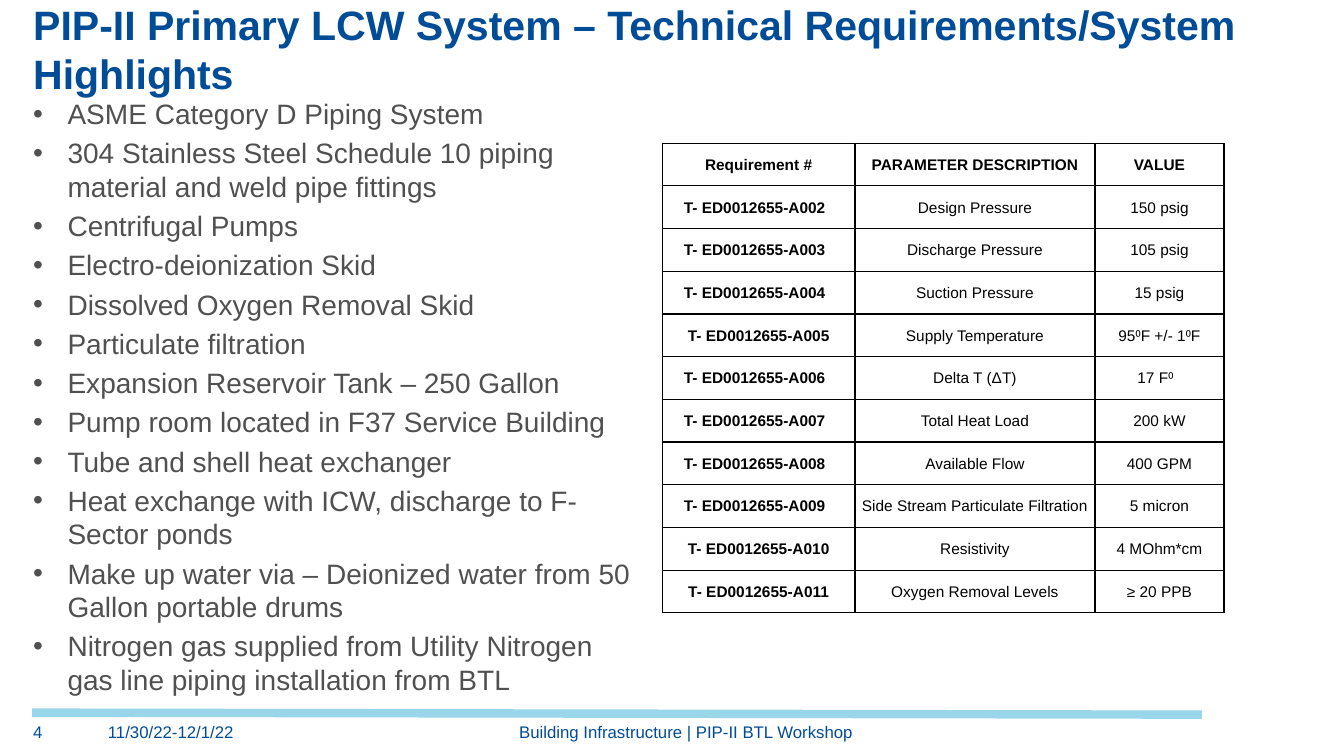
from lxml.etree import SubElement
from pptx import Presentation
from pptx.dml.color import RGBColor
from pptx.enum.shapes import MSO_CONNECTOR
from pptx.enum.text import MSO_ANCHOR, PP_ALIGN
from pptx.oxml.ns import qn
from pptx.util import Inches, Pt

BULLETS = [
    "ASME Category D Piping System",
    "304 Stainless Steel Schedule 10 piping material and weld pipe fittings",
    "Centrifugal Pumps",
    "Electro-deionization Skid",
    "Dissolved Oxygen Removal Skid",
    "Particulate filtration",
    "Expansion Reservoir Tank – 250 Gallon",
    "Pump room located in F37 Service Building",
    "Tube and shell heat exchanger",
    "Heat exchange with ICW, discharge to F-Sector ponds",
    "Make up water via – Deionized water from 50 Gallon portable drums",
    "Nitrogen gas supplied from Utility Nitrogen gas line piping installation from BTL",
]
HEADER = ("Requirement #", "PARAMETER DESCRIPTION", "VALUE")
PARAMETERS = [
    ("Design Pressure", "150 psig"),
    ("Discharge Pressure", "105 psig"),
    ("Suction Pressure", "15 psig"),
    ("Supply Temperature", "95⁰F +/- 1⁰F"),
    ("Delta T (ΔT)", "17 F⁰"),
    ("Total Heat Load", "200 kW"),
    ("Available Flow", "400 GPM"),
    ("Side Stream Particulate Filtration", "5 micron"),
    ("Resistivity", "4 MOhm*cm"),
    ("Oxygen Removal Levels", "≥ 20 PPB"),
]
REQUIREMENTS = [
    (f"T- ED0012655-A{number:03d}", *parameter)
    for number, parameter in enumerate(PARAMETERS, start=2)
]
CENTERED_REQUIREMENTS = ("A005", "A010", "A011")


def color(value):
    return RGBColor.from_string(value)


def write(paragraph, text, size=12, fill="004C97", bold=False,
          align=PP_ALIGN.LEFT, space_before=0, bullet=False):
    paragraph.alignment = align
    paragraph.space_before = Pt(space_before)
    if bullet:
        properties = paragraph._p.get_or_add_pPr()
        properties.set("marL", str(Inches(0.34)))
        properties.set("indent", str(Inches(-0.34)))
        SubElement(properties, qn("a:buFont"), typeface="Arial")
        SubElement(properties, qn("a:buChar"), char="•")
    run = paragraph.add_run()
    run.text = text
    run.font.name = "Arial"
    run.font.size = Pt(size)
    run.font.bold = bold
    run.font.color.rgb = color(fill)


class SlideBuilder:
    def __init__(self, slide):
        self.slide = slide
        self.border = "000000"

    def text(self, texts, left, top, width, height, anchor=MSO_ANCHOR.TOP,
             paragraph_gap=0, **style):
        box = self.slide.shapes.add_textbox(
            Inches(left), Inches(top), Inches(width), Inches(height))
        frame = box.text_frame
        frame.word_wrap = True
        frame.vertical_anchor = anchor
        frame.margin_left = frame.margin_right = 0
        frame.margin_top = frame.margin_bottom = 0
        for index, text in enumerate(texts):
            paragraph = frame.add_paragraph() if index else frame.paragraphs[0]
            write(paragraph, text, space_before=paragraph_gap if index else 0, **style)

    def line(self, start, end, stroke, width):
        connector = self.slide.shapes.add_connector(
            MSO_CONNECTOR.STRAIGHT, *map(Inches, start + end))
        connector.line.color.rgb = color(stroke)
        connector.line.width = Pt(width)
        SubElement(connector._element.spPr, qn("a:effectLst"))

    def table(self, rows, left, top, widths, row_height):
        table = self.slide.shapes.add_table(
            len(rows), len(widths), Inches(left), Inches(top),
            Inches(sum(widths)), Inches(row_height * len(rows))).table
        for column, width in zip(table.columns, widths):
            column.width = Inches(width)
        for row_index, values in enumerate(rows):
            table.rows[row_index].height = Inches(row_height)
            for column_index, text in enumerate(values):
                self.cell(table.cell(row_index, column_index), text,
                          row_index == 0 or column_index == 0)

    def cell(self, cell, text, bold):
        shifted = text == "17 F⁰" or (
            text.startswith("T-") and not text.endswith(CENTERED_REQUIREMENTS))
        cell.margin_left = cell.margin_top = Inches(0.01)
        cell.margin_right = Inches(0.09 if shifted else 0.01)
        cell.margin_bottom = 0
        cell.vertical_anchor = MSO_ANCHOR.MIDDLE
        write(cell.text_frame.paragraphs[0], text, size=11, fill="000000",
              bold=bold, align=PP_ALIGN.CENTER)
        properties = cell._tc.get_or_add_tcPr()
        for side in ("lnL", "lnR", "lnT", "lnB"):
            edge = SubElement(properties, qn(f"a:{side}"), w=str(Pt(1)))
            fill = SubElement(edge, qn("a:solidFill"))
            SubElement(fill, qn("a:srgbClr"), val=self.border)
        cell.fill.background()


def main():
    presentation = Presentation()
    presentation.slide_width = Inches(13.33)
    presentation.slide_height = Inches(7.5)
    builder = SlideBuilder(presentation.slides.add_slide(presentation.slide_layouts[6]))

    builder.line((0.32, 7.07), (11.92, 7.09), "99D6EA", 6)
    builder.text(BULLETS, 0.33, 0.96, 5.93, 5.53, size=20, fill="505050",
                 paragraph_gap=4, bullet=True)
    builder.text(["PIP-II Primary LCW System – Technical Requirements/System Highlights"],
                 0.33, 0.5, 12.67, 0.47, anchor=MSO_ANCHOR.BOTTOM,
                 size=29.3, bold=True)
    builder.text(["11/30/22-12/1/22"], 1.07, 7.16, 1.35, 0.26)
    builder.text(["Building Infrastructure | PIP-II BTL Workshop"],
                 2.24, 7.16, 9.13, 0.27, align=PP_ALIGN.CENTER)
    builder.text(["4"], 0.33, 7.16, 0.6, 0.26)
    builder.table([HEADER] + REQUIREMENTS, 6.57, 1.42, (1.91, 2.38, 1.28), 4.66 / 11)
    presentation.save("out.pptx")


if __name__ == "__main__":
    main()
